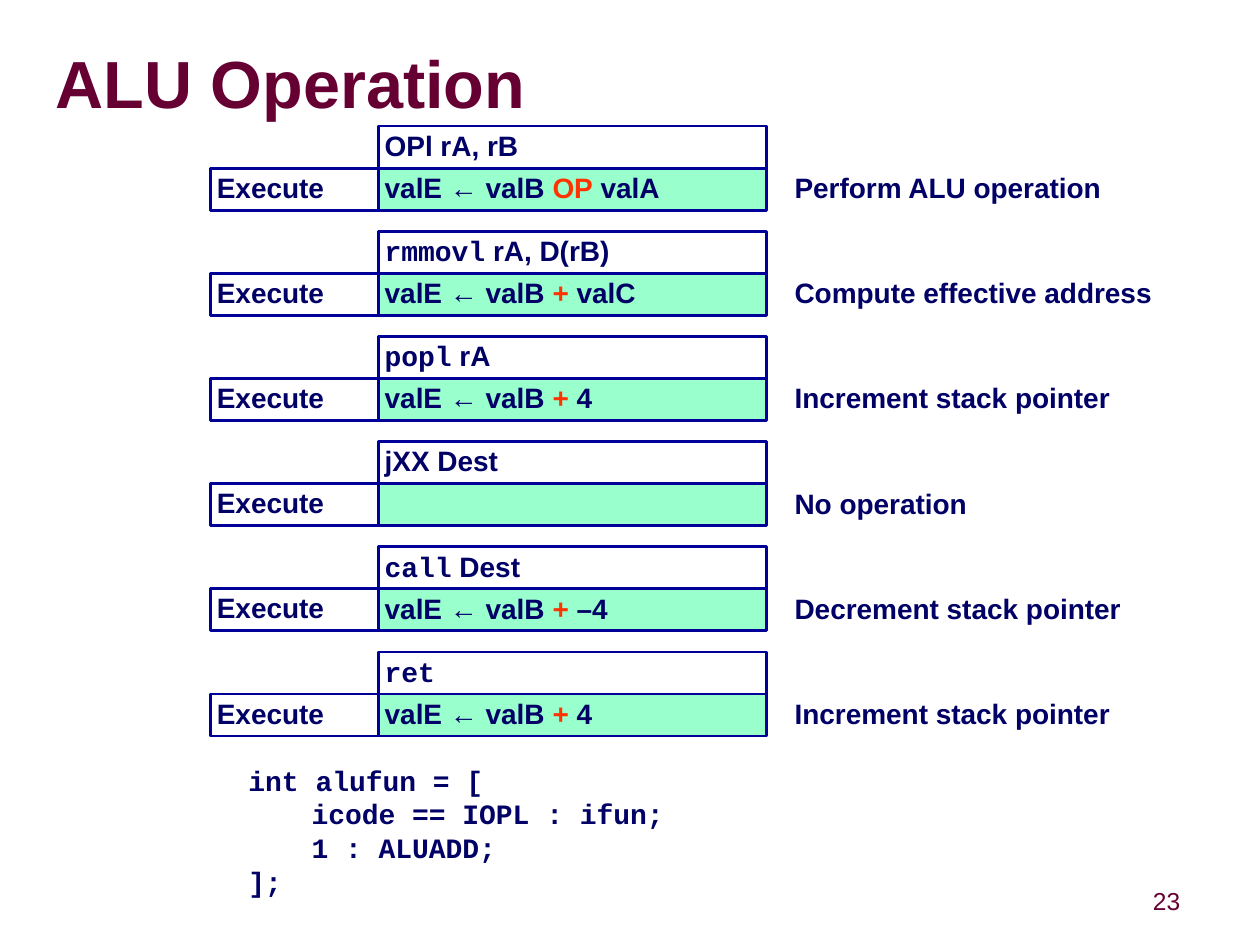
from pptx import Presentation
from pptx.dml.color import RGBColor
from pptx.enum.shapes import MSO_SHAPE
from pptx.enum.text import MSO_ANCHOR, PP_ALIGN
from pptx.util import Inches, Pt

RECT = MSO_SHAPE.RECTANGLE
TOP, MIDDLE = MSO_ANCHOR.TOP, MSO_ANCHOR.MIDDLE
LEFT, CENTER = PP_ALIGN.LEFT, PP_ALIGN.CENTER

SANS, MONO = "Arial", "Courier New"
NAVY, BLUE, MINT = "000066", "000099", "99FFCC"
RED, WINE, WHITE = "FF3300", "660033", "FFFFFF"


def color(code):
    return RGBColor.from_string(code)


class Deck:
    def __init__(self, slide):
        self.slide = slide
        self.size = 16
        self.inset = 0.05
        self.lead = 0.9

    def set_text(self, shape, lines, anchor=TOP, align=LEFT, size=None,
                 bold=True, lead=None, inset=None, wrap=True):
        frame = shape.text_frame
        frame.word_wrap = wrap
        frame.vertical_anchor = anchor
        pad = Inches(self.inset if inset is None else inset)
        frame.margin_left = frame.margin_right = pad
        frame.margin_top = frame.margin_bottom = pad
        for i, line in enumerate(lines):
            para = frame.add_paragraph() if i else frame.paragraphs[0]
            para.alignment = align
            para.line_spacing = lead or self.lead
            for text, face, tint in line:
                run = para.add_run()
                run.text = text
                run.font.name = face
                run.font.size = Pt(size or self.size)
                run.font.bold = bold
                run.font.color.rgb = color(tint)

    def box(self, x, y, w, h, lines, fill=None, edge=BLUE, width=1.5, **style):
        shape = self.slide.shapes.add_shape(
            RECT, Inches(x), Inches(y), Inches(w), Inches(h))
        shape.shadow.inherit = False
        if fill:
            shape.fill.solid()
            shape.fill.fore_color.rgb = color(fill)
        else:
            shape.fill.background()
        shape.line.color.rgb = color(edge)
        shape.line.width = Pt(width)
        self.set_text(shape, lines, **style)

    def label(self, x, y, w, h, lines, **style):
        shape = self.slide.shapes.add_textbox(
            Inches(x), Inches(y), Inches(w), Inches(h))
        self.set_text(shape, lines, **style)


def sans(text, tint=NAVY):
    return text, SANS, tint


def mono(text):
    return text, MONO, NAVY


def step(sign, value):
    return [sans("valE ← valB "), sans(sign, RED), sans(" " + value)]


STAGES = [
    ([sans("OPl rA, rB")], step("OP", "valA"), "Perform ALU operation"),
    ([mono("rmmovl"), sans(" rA, D(rB)")], step("+", "valC"),
     "Compute effective address"),
    ([mono("popl"), sans(" rA")], step("+", "4"), "Increment stack pointer"),
    ([sans("jXX Dest")], [], "No operation"),
    ([mono("call"), sans(" Dest")], step("+", "–4"),
     "Decrement stack pointer"),
    ([mono("ret")], step("+", "4"), "Increment stack pointer"),
]
CODE = ["int alufun = [", "\ticode == IOPL : ifun;", "\t1 : ALUADD;", "];"]
ROW = 1 / 3
PITCH = 2.5 * ROW


def main():
    prs = Presentation()
    prs.slide_width, prs.slide_height = Inches(9.99), Inches(7.49)
    deck = Deck(prs.slides.add_slide(prs.slide_layouts[6]))

    deck.box(0.44, 0.27, 9.52, 0.85, [[sans("ALU Operation", WINE)]],
             fill=WHITE, edge=WHITE, width=2, anchor=MIDDLE, size=38,
             lead=0.87, inset=0)

    for i, (head, work, note) in enumerate(STAGES):
        top = 1 + i * PITCH
        low = top + ROW
        deck.box(3, top, 3.08, ROW, [head])
        deck.box(1.67, low, 1.33, ROW, [[sans("Execute")]], anchor=MIDDLE)
        deck.box(3, low, 3.08, ROW, [work], fill=MINT)
        deck.label(6.25, low, 3.08, ROW, [[sans(note)]])

    deck.label(1.92, 6, 6.25, 1.17, [[mono(line)] for line in CODE], lead=1.0)
    deck.label(9.08, 7, 0.34, 0.31, [[sans("23", WINE)]], anchor=MIDDLE,
               align=CENTER, size=14, bold=False, wrap=False)
    prs.save("out.pptx")


if __name__ == "__main__":
    main()
